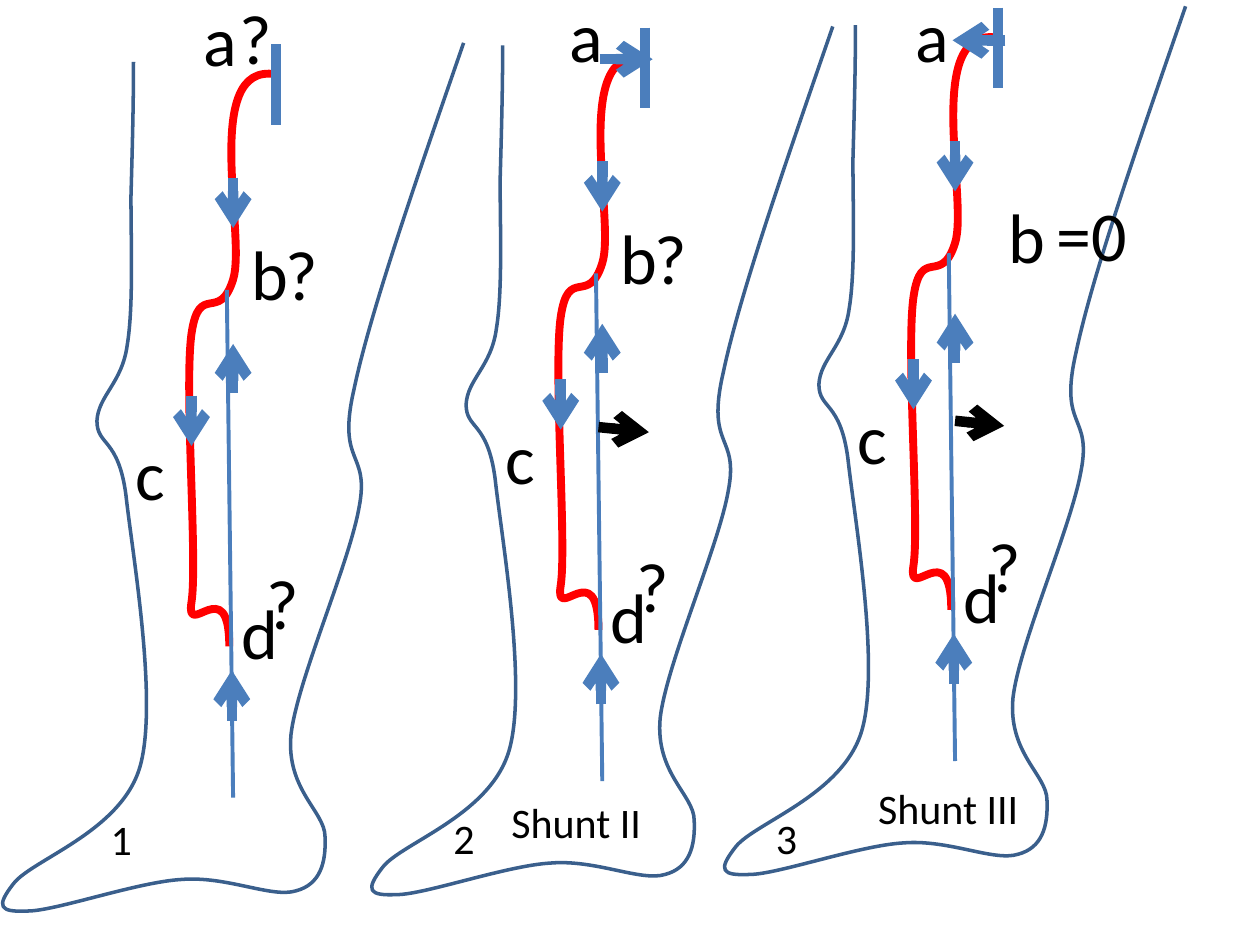
"""Build a slide of three leg diagrams comparing venous shunt flow."""
from lxml import etree
from pptx import Presentation
from pptx.dml.color import RGBColor
from pptx.enum.shapes import MSO_CONNECTOR
from pptx.enum.text import MSO_AUTO_SIZE
from pptx.oxml.ns import qn
from pptx.util import Inches, Pt

STRAIGHT = MSO_CONNECTOR.STRAIGHT
GROW = MSO_AUTO_SIZE.SHAPE_TO_FIT_TEXT
BLUE, OUTLINE, RED, BLACK = "4B7EBC", "3A5F8C", "FF0000", "000000"

presentation = Presentation()
presentation.slide_width = Inches(10)
presentation.slide_height = Inches(7.5)
slide = presentation.slides.add_slide(presentation.slide_layouts[6])
cell = presentation.slide_width // 10


def add_label(text, column, row, columns=0.5, rows=0.77, size=40):
    """Place a text label on the grid."""
    box = slide.shapes.add_textbox(*(int(n * cell) for n in (column, row, columns, rows)))
    frame = box.text_frame
    frame.word_wrap = True
    frame.auto_size = GROW
    paragraph = frame.paragraphs[0]
    paragraph.text = text
    paragraph.font.name = "Calibri"
    paragraph.font.size = Pt(size)
    paragraph.font.color.rgb = RGBColor.from_string(BLACK)


def add_line(x1, y1, x2, y2, color=BLUE, weight=6, arrow=True):
    """Draw a straight line on the grid, with an arrowhead at its end if asked."""
    line = slide.shapes.add_connector(STRAIGHT, *(int(n * cell) for n in (x1, y1, x2, y2)))
    line.line.color.rgb = RGBColor.from_string(color)
    line.line.width = Pt(weight)
    if arrow:
        etree.SubElement(line.line._get_or_add_ln(), qn("a:tailEnd"), type="arrow")
    etree.SubElement(line._element.spPr, qn("a:effectLst"))


leg_outline = [
    (1.06, 0.49), (1.06, 0.84), (1.05, 1.19), (1.04, 1.56),
    (1.04, 1.94), (1.06, 2.44), (1.01, 2.74), (0.97, 3.04), (0.78, 3.14), (0.77, 3.34),
    (0.77, 3.54), (0.94, 3.47), (1, 3.93), (1.05, 4.39), (1.26, 5.58), (1.11, 6.09),
    (0.96, 6.6), (0.26, 6.82), (0.11, 7.01), (-0.04, 7.2), (0, 7.24), (0.22, 7.23),
    (0.44, 7.23), (1.09, 7), (1.44, 6.98), (1.8, 6.95), (2.16, 7.13), (2.35, 7.07),
    (2.54, 7.02), (2.59, 6.85), (2.58, 6.64), (2.58, 6.44), (2.27, 6.27), (2.31, 5.83),
    (2.36, 5.4), (2.77, 4.48), (2.85, 4.03), (2.94, 3.57), (2.67, 3.7), (2.81, 3.09),
    (2.94, 2.47), (3.31, 1.41), (3.68, 0.34),
]
red_vein = [
    (2.19, 0.59), (1.59, 0.49), (1.96, 1.88), (1.85, 2.22),
    (1.74, 2.57), (1.58, 2.23), (1.52, 2.65), (1.46, 3.08), (1.57, 4.46), (1.52, 4.78),
    (1.47, 5.09), (1.82, 4.52), (1.82, 5.13),
]
curves = [
    (leg_outline, (0.02, 0.34, 3.68, 7.23), OUTLINE, 2),
    (red_vein, (1.5, 0.59, 2.18, 5.13), RED, 4.5),
]
flow_arrows = [
    (1.85, 1.41, 1.85, 1.81), (1.84, 5.72, 1.84, 5.32), (1.52, 3.14, 1.52, 3.54),
]
legs = [
    (0, 0, 0, 1.9, True, None),
    (2.93, -0.13, -0.03, 1.9, True, (4.76, 0.47, 5.18, 0.47)),
    (5.73, -0.29, 0.05, 2.18, False, (7.98, 0.32, 7.56, 0.32)),
]

for text, column, row in (
    ("a", 1.52, -0.08), ("?", 1.8, -0.09), ("a", 4.42, -0.11), ("a", 7.17, -0.11),
):
    add_label(text, column, row)

for dx, dy, middle_shift, b_column, b_unknown, top_arrow in legs:
    for points, (left, top, right, bottom), color, weight in curves:
        builder = slide.shapes.build_freeform(int((left + dx) * cell), int((top + dy) * cell))
        corner = (int((right + dx) * cell), int((bottom + dy) * cell))
        builder.add_line_segments([corner], close=False)
        shape = builder.convert_to_shape()
        shape.shadow.inherit = False
        shape.fill.background()
        shape.line.color.rgb = RGBColor.from_string(color)
        shape.line.width = Pt(weight)
        track = next(shape._element.iter(qn("a:path")))
        for child in list(track):
            track.remove(child)
        for index, (x, y) in enumerate(points):
            if index == 0:
                segment = etree.SubElement(track, qn("a:moveTo"))
            elif index % 3 == 1:
                segment = etree.SubElement(track, qn("a:cubicBezTo"))
            etree.SubElement(segment, qn("a:pt"), x=str(round((x - left) * cell)),
                             y=str(round((y - top) * cell)))
    for x1, y1, x2, y2 in flow_arrows:
        add_line(x1 + dx, y1 + dy, x2 + dx, y2 + dy)
    middle = dy + middle_shift
    add_line(1.85 + dx, 3.12 + middle, 1.85 + dx, 2.73 + middle)
    add_label("b", b_column + dx, 1.78 + dy)
    add_label("c", 0.98 + dx, 3.37 + dy, 0.28)
    add_label("d", 1.82 + dx, 4.63 + dy)
    add_line(2.19 + dx, 0.35 + dy, 2.19 + dx, 0.99 + dy, arrow=False)
    add_line(1.8 + dx, 2.3 + dy, 1.85 + dx, 6.33 + dy, weight=2.25, arrow=False)
    if b_unknown:
        add_label("?", 2.17 + dx, 1.78 + dy)
    add_label("?", 2.02 + dx, 4.39 + dy)
    if top_arrow:
        add_line(*top_arrow)

add_line(4.75, 3.39, 5.15, 3.43, BLACK)
add_line(7.58, 3.34, 7.97, 3.38, BLACK)

for text, column, row in (
    ("Shunt II", 3.96, 6.27), ("Shunt III", 6.87, 6.16),
    ("1", 0.78, 6.41), ("2", 3.5, 6.4), ("3", 6.06, 6.4),
):
    add_label(text, column, row, 1.75, 0.5, 24)
add_label("=0", 8.29, 1.47, 0.96)

presentation.save("out.pptx")
